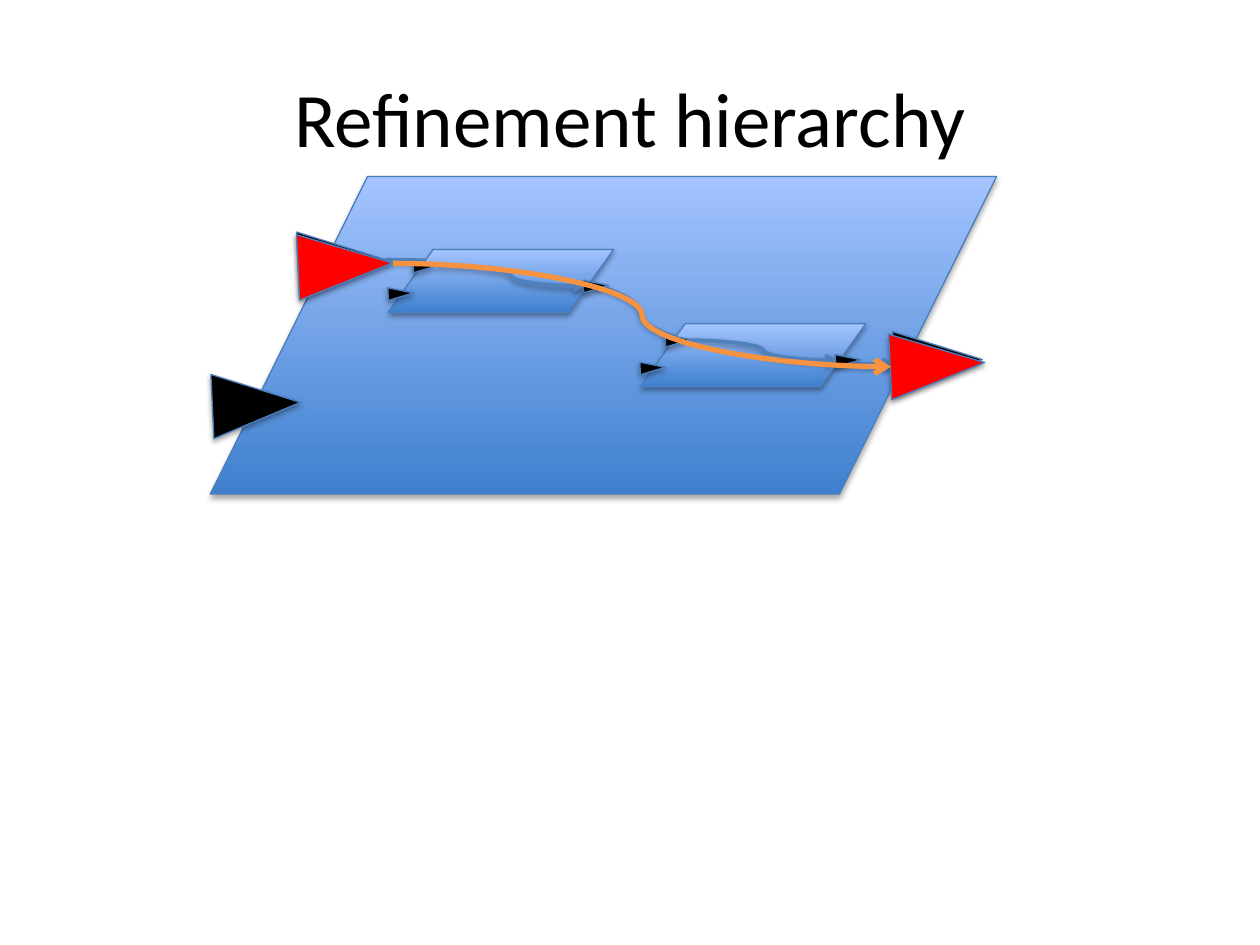
from pptx import Presentation
from pptx.dml.color import RGBColor
from pptx.enum.shapes import MSO_CONNECTOR, MSO_SHAPE
from pptx.enum.text import MSO_ANCHOR, PP_ALIGN
from pptx.oxml import parse_xml
from pptx.oxml.ns import nsdecls
from pptx.util import Inches, Pt

BLACK = RGBColor(0x00, 0x00, 0x00)
RED = RGBColor(0xFF, 0x00, 0x00)
ORANGE = RGBColor(0xF6, 0x92, 0x40)
BLUE = RGBColor(0x4F, 0x81, 0xBD)
OUTLINE = RGBColor(0x4B, 0x7E, 0xBC)
DARK_BLUE = RGBColor(0x3F, 0x80, 0xCE)
LIGHT_BLUE = RGBColor(0xA4, 0xC4, 0xFF)

NAMESPACE = nsdecls("a")
SHADOW = (
    f'<a:effectLst {NAMESPACE}><a:outerShdw blurRad="39370" dist="%d" dir="5400000" rotWithShape="0">'
    '<a:srgbClr val="000000"><a:alpha val="%d"/></a:srgbClr></a:outerShdw></a:effectLst>'
)
SHAPE_SHADOW = SHADOW % (Pt(1.8), 35000)
FLOW_SHADOW = SHADOW % (Pt(1.6), 38000)
NO_SHADOW = f"<a:effectLst {NAMESPACE}/>"
ARROWHEAD = f'<a:tailEnd {NAMESPACE} type="arrow"/>'


def add_part(preset, left, top, width, height, color=None):
    shape = slide.shapes.add_shape(preset, Inches(left), Inches(top), Inches(width), Inches(height))
    if color is None:
        shape.fill.gradient()
        shape.fill.gradient_angle = 90
        for stop, stop_color in zip(shape.fill.gradient_stops, (DARK_BLUE, LIGHT_BLUE)):
            stop.color.rgb = stop_color
    else:
        shape.rotation = 87.3
        shape.fill.solid()
        shape.fill.fore_color.rgb = color
    shape.line.color.rgb = OUTLINE
    shape.line.width = Pt(0.75)
    shape._element.spPr.append(parse_xml(SHAPE_SHADOW))


def add_flow(start_x, start_y, end_x, end_y, color, width, effect):
    connector = slide.shapes.add_connector(
        MSO_CONNECTOR.CURVE, Inches(start_x), Inches(start_y), Inches(end_x), Inches(end_y))
    connector.line.color.rgb = color
    connector.line.width = Pt(width)
    connector.line._get_or_add_ln().append(parse_xml(ARROWHEAD))
    connector._element.spPr.append(parse_xml(effect))


presentation = Presentation()
presentation.slide_width = Inches(10)
presentation.slide_height = Inches(7.5)
slide = presentation.slides.add_slide(presentation.slide_layouts[6])

title = slide.shapes.add_textbox(Inches(0.5), Inches(0.3), Inches(9), Inches(1.25))
title.text_frame.word_wrap = True
title.text_frame.vertical_anchor = MSO_ANCHOR.MIDDLE
paragraph = title.text_frame.paragraphs[0]
paragraph.alignment = PP_ALIGN.CENTER
run = paragraph.add_run()
run.text = "Refinement hierarchy"
run.font.name = "Calibri"
run.font.size = Pt(44)
run.font.color.rgb = BLACK

add_part(MSO_SHAPE.FLOWCHART_DATA, 1.67, 1.4, 6.24, 2.52)
for left, top in ((2.46, 1.73), (1.78, 2.86), (7.19, 2.52)):
    add_part(MSO_SHAPE.ISOSCELES_TRIANGLE, left, top, 0.51, 0.7, BLACK)
add_flow(3.06, 2.06, 7.09, 2.89, BLUE, 2, FLOW_SHADOW)

for block_left, block_top in ((3.08, 1.98), (5.08, 2.57)):
    add_part(MSO_SHAPE.FLOWCHART_DATA, block_left, block_top, 1.79, 0.5)
    for offset_x, offset_y in ((0.25, 0.03), (0.05, 0.25), (1.6, 0.19)):
        add_part(MSO_SHAPE.ISOSCELES_TRIANGLE, block_left + offset_x, block_top + offset_y, 0.1, 0.2, BLACK)
    add_flow(block_left + 0.4, block_top + 0.13, block_left + 1.56, block_top + 0.29, BLUE, 2, FLOW_SHADOW)

for left, top in ((2.48, 1.73), (7.18, 2.52)):
    add_part(MSO_SHAPE.ISOSCELES_TRIANGLE, left, top, 0.52, 0.75, RED)
add_flow(3.12, 2.09, 7.07, 2.91, ORANGE, 3, NO_SHADOW)

presentation.save("out.pptx")
